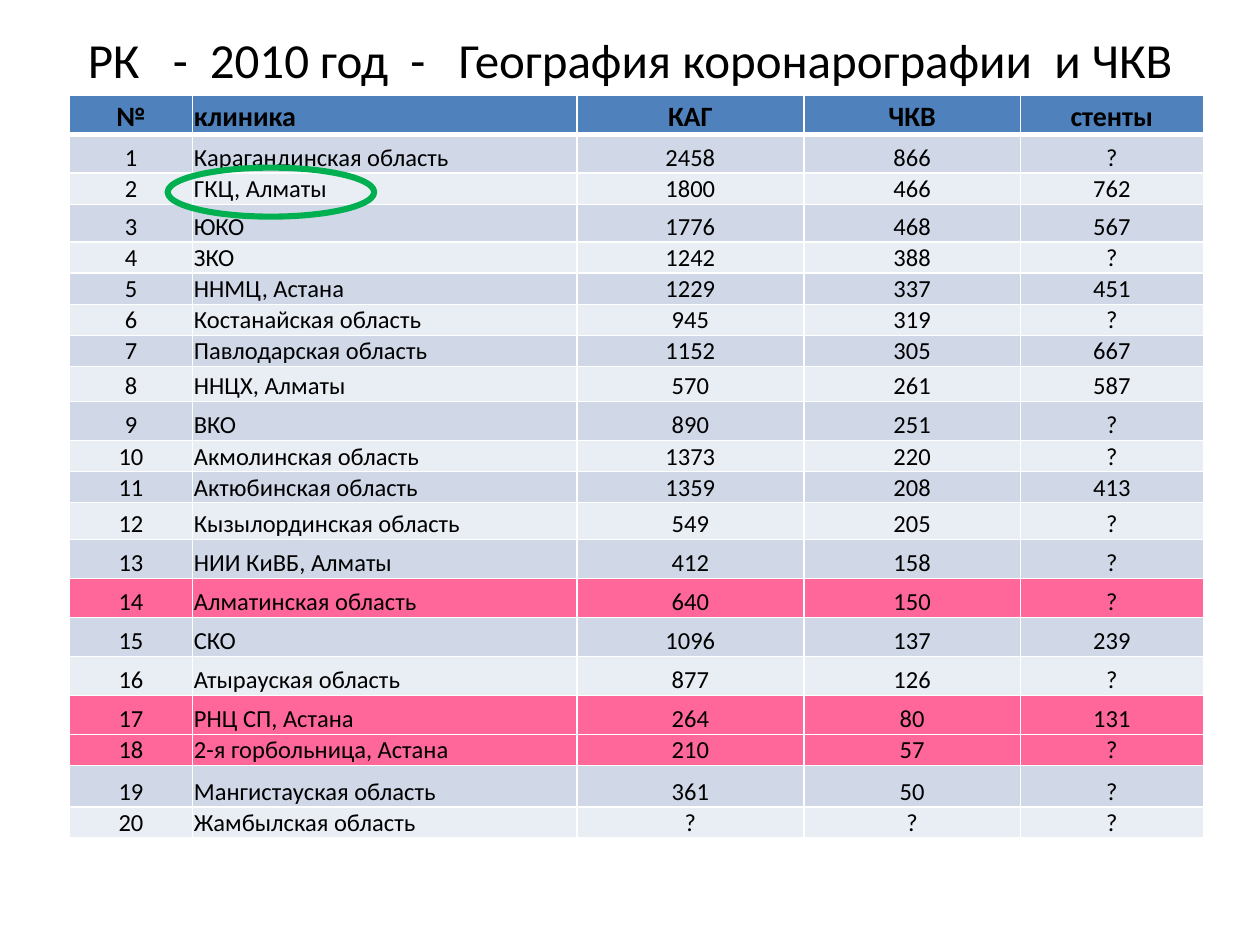
"""Build a slide with a table of coronary angiography and PCI by clinic."""
from lxml.etree import SubElement
from pptx import Presentation
from pptx.dml.color import RGBColor
from pptx.enum.shapes import MSO_SHAPE
from pptx.enum.text import MSO_ANCHOR, PP_ALIGN
from pptx.oxml.ns import qn
from pptx.util import Pt

FONT = "Calibri"
COLORS = {
    "text": "000000", "header": "4F81BD", "odd": "D0D8E8", "even": "E9EDF4",
    "marked": "FF6699", "border": "FFFFFF", "ring": "00B050",
}
TITLE_SIZE = 28
TITLE_SPACE = 6.33
TITLE_PARTS = [
    ("РК", 3), ("-", 2), ("2010 год", 2), ("-", 3),
    ("География коронарографии", 2), ("и ЧКВ", 0),
]
HEADINGS = ("№", "клиника", "КАГ", "ЧКВ", "стенты")
CLINICS = [
    ("Карагандинская область", "2458", "866", "?"),
    ("ГКЦ, Алматы", "1800", "466", "762"),
    ("ЮКО", "1776", "468", "567"),
    ("ЗКО", "1242", "388", "?"),
    ("ННМЦ, Астана", "1229", "337", "451"),
    ("Костанайская область", "945", "319", "?"),
    ("Павлодарская область", "1152", "305", "667"),
    ("ННЦХ, Алматы", "570", "261", "587"),
    ("ВКО", "890", "251", "?"),
    ("Акмолинская область", "1373", "220", "?"),
    ("Актюбинская область", "1359", "208", "413"),
    ("Кызылординская область", "549", "205", "?"),
    ("НИИ КиВБ, Алматы", "412", "158", "?"),
    ("Алматинская область", "640", "150", "?"),
    ("СКО", "1096", "137", "239"),
    ("Атырауская область", "877", "126", "?"),
    ("РНЦ СП, Астана", "264", "80", "131"),
    ("2-я горбольница, Астана", "210", "57", "?"),
    ("Мангистауская область", "361", "50", "?"),
    ("Жамбылская область", "?", "?", "?"),
]
MARKED = {14, 17, 18}
COLUMN_WIDTHS = (70.5, 219.6, 129.6, 123.8, 104.5)
TALL, SHORT = 22.3, 17.8
ROW_HEIGHTS = {2: SHORT, 3: 21.6, 4: SHORT, 5: SHORT, 6: SHORT, 7: SHORT, 8: 20,
               10: SHORT, 11: SHORT, 12: 21, 18: SHORT, 19: 23.8, 20: SHORT}


def color(name):
    return RGBColor.from_string(COLORS[name])


def style(paragraph, size, align, bold=False):
    paragraph.alignment = align
    font = paragraph.font
    font.name, font.size, font.bold = FONT, Pt(size), bold
    font.color.rgb = color("text")


def add_title(slide):
    title = slide.shapes.add_textbox(Pt(36), Pt(11.5), Pt(648), Pt(44.6))
    frame = title.text_frame
    frame.word_wrap = True
    frame.vertical_anchor = MSO_ANCHOR.MIDDLE
    line = frame.paragraphs[0]
    style(line, TITLE_SIZE, PP_ALIGN.CENTER)
    for words, spaces in TITLE_PARTS:
        line.add_run().text = words
        if spaces:
            gap = line.add_run()
            gap.text = " "
            gap.font.size = Pt(TITLE_SIZE)
            tracking = round((spaces - 1) * TITLE_SPACE * 100)
            gap.font._element.set("spc", str(tracking))


def set_borders(cell, top, bottom):
    properties = cell._tc.get_or_add_tcPr()
    for side, width in (("L", 1), ("R", 1), ("T", top), ("B", bottom)):
        border = SubElement(properties, qn(f"a:ln{side}"), w=str(Pt(width)))
        fill = SubElement(border, qn("a:solidFill"))
        SubElement(fill, qn("a:srgbClr"), val=COLORS["border"])


def row_color(number):
    if number == 0:
        return "header"
    if number in MARKED:
        return "marked"
    return "odd" if number % 2 else "even"


def add_clinics(slide):
    rows = [HEADINGS] + [(str(n), *clinic) for n, clinic in enumerate(CLINICS, 1)]
    heights = [ROW_HEIGHTS.get(n, TALL) for n in range(len(rows))]
    table = slide.shapes.add_table(
        len(rows), len(HEADINGS), Pt(39.6), Pt(54.4),
        Pt(sum(COLUMN_WIDTHS)), Pt(sum(heights))).table
    for column, width in zip(table.columns, COLUMN_WIDTHS):
        column.width = Pt(width)
    for number, values in enumerate(rows):
        table.rows[number].height = Pt(heights[number])
        header = number == 0
        for index, value in enumerate(values):
            cell = table.cell(number, index)
            cell.text = value
            cell.vertical_anchor = MSO_ANCHOR.BOTTOM
            cell.margin_left = cell.margin_right = cell.margin_top = Pt(0.72)
            cell.margin_bottom = 0
            align = PP_ALIGN.LEFT if index == 1 else PP_ALIGN.CENTER
            style(cell.text_frame.paragraphs[0], 16 if header else 14, align, header)
            set_borders(cell, 3 if number == 1 else 1, 3 if header else 1)
            cell.fill.solid()
            cell.fill.fore_color.rgb = color(row_color(number))


def add_ring(slide):
    ring = slide.shapes.add_shape(
        MSO_SHAPE.OVAL, Pt(95.8), Pt(95.8), Pt(118), Pt(28))
    ring.shadow.inherit = False
    ring.fill.background()
    ring.line.color.rgb = color("ring")
    ring.line.width = Pt(3.5)


def main():
    deck = Presentation()
    deck.slide_width, deck.slide_height = Pt(720), Pt(540)
    slide = deck.slides.add_slide(deck.slide_layouts[6])
    add_title(slide)
    add_clinics(slide)
    add_ring(slide)
    deck.save("out.pptx")


if __name__ == "__main__":
    main()
